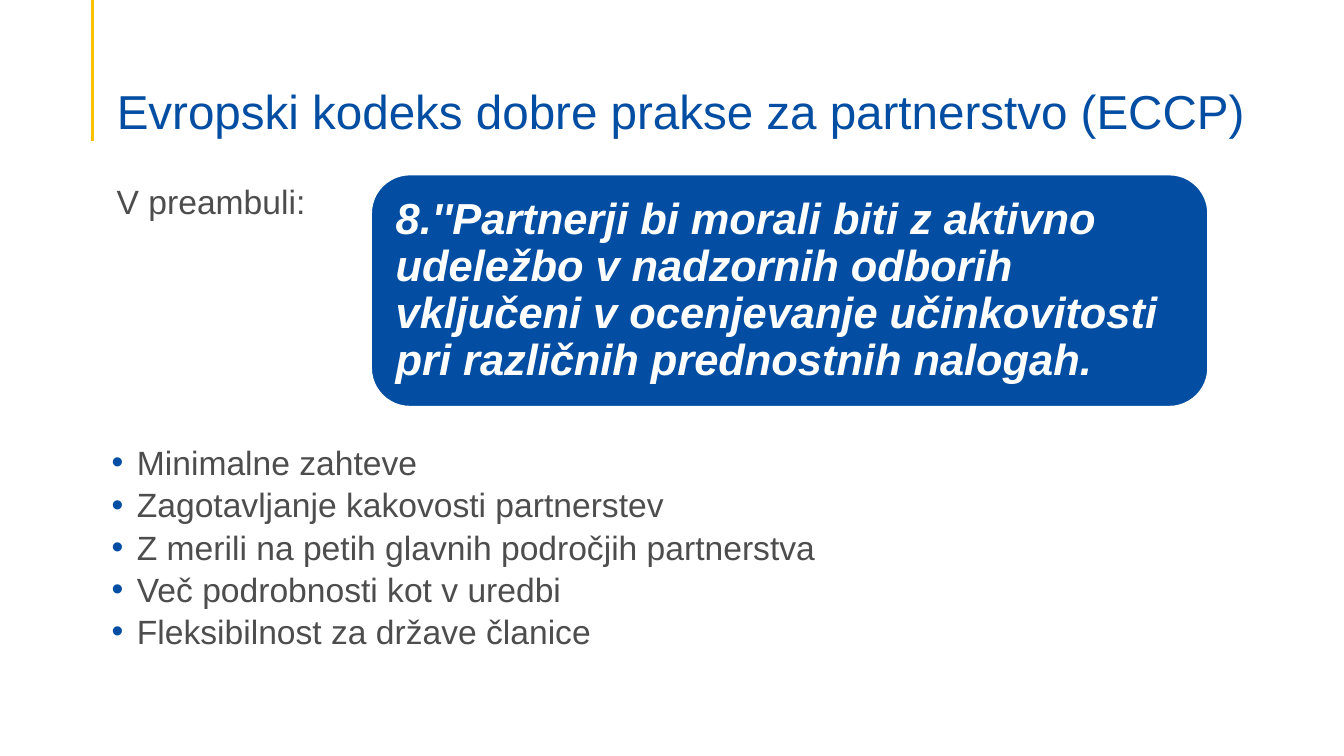
from dataclasses import dataclass

from lxml import etree
from pptx import Presentation
from pptx.dml.color import RGBColor
from pptx.enum.shapes import MSO_CONNECTOR, MSO_SHAPE
from pptx.enum.text import MSO_ANCHOR, PP_ALIGN
from pptx.oxml.ns import qn
from pptx.util import Inches, Pt

STRAIGHT = MSO_CONNECTOR.STRAIGHT
ROUND = MSO_SHAPE.ROUNDED_RECTANGLE
TOP, MIDDLE, BOTTOM = MSO_ANCHOR.TOP, MSO_ANCHOR.MIDDLE, MSO_ANCHOR.BOTTOM
LEFT = PP_ALIGN.LEFT
COLS, ROWS = 80, 45


@dataclass(frozen=True)
class Theme:
    font: str = "Arial"
    blue: RGBColor = RGBColor(0x03, 0x4E, 0xA2)
    gold: RGBColor = RGBColor(0xFF, 0xC0, 0x00)
    gray: RGBColor = RGBColor(0x4D, 0x4D, 0x4D)
    white: RGBColor = RGBColor(0xFF, 0xFF, 0xFF)
    title: int = 34
    quote: int = 31
    body: int = 24


class Deck:
    def __init__(self, theme):
        self.theme = theme
        self.show = Presentation()
        self.show.slide_width = Inches(13.33)
        self.show.slide_height = Inches(7.5)
        self.slide = self.show.slides.add_slide(self.show.slide_layouts[6])

    def place(self, col, row, wide, high):
        unit_x = self.show.slide_width / COLS
        unit_y = self.show.slide_height / ROWS
        return [round(n) for n in
                (col * unit_x, row * unit_y, wide * unit_x, high * unit_y)]

    def rule(self, col, row, high, color):
        x, y, _, tall = self.place(col, row, 0, high)
        line = self.slide.shapes.add_connector(STRAIGHT, x, y, x, y + tall)
        line.line.color.rgb = color
        line.line.width = Pt(2.25)
        etree.SubElement(line._element.spPr, qn("a:effectLst"))

    def label(self, shape, lines, size, color, anchor=TOP, pad=(0.1, 0.05, 0.1, 0.05),
              space=1.0, strong=False, bullet=False):
        frame = shape.text_frame
        frame.word_wrap = True
        frame.vertical_anchor = anchor
        (frame.margin_left, frame.margin_top,
         frame.margin_right, frame.margin_bottom) = map(Inches, pad)
        for i, words in enumerate(lines):
            para = frame.add_paragraph() if i else frame.paragraphs[0]
            para.alignment = LEFT
            para.line_spacing = space
            if bullet:
                self.mark(para)
            run = para.add_run()
            run.text = words
            font = run.font
            font.name = self.theme.font
            font.size = Pt(size)
            font.color.rgb = color
            font.bold = font.italic = strong

    def mark(self, para):
        para.level = 1
        props = para._p.get_or_add_pPr()
        props.set("marL", str(Inches(0.75)))
        props.set("indent", str(Inches(-0.25)))
        tint = etree.SubElement(props, qn("a:buClr"))
        etree.SubElement(tint, qn("a:srgbClr"), val=str(self.theme.blue))
        etree.SubElement(props, qn("a:buFont"), typeface=self.theme.font)
        etree.SubElement(props, qn("a:buChar"), char="•")

    def text(self, box, lines, size, color, **style):
        shape = self.slide.shapes.add_textbox(*self.place(*box))
        self.label(shape, lines, size, color, **style)

    def panel(self, box, lines, size, color, **style):
        shape = self.slide.shapes.add_shape(ROUND, *self.place(*box))
        shape.shadow.inherit = False
        shape.fill.solid()
        shape.fill.fore_color.rgb = self.theme.blue
        shape.line.color.rgb = self.theme.white
        shape.line.width = Pt(1)
        self.label(shape, lines, size, color, **style)


def main():
    theme = Theme()
    deck = Deck(theme)
    deck.rule(5.5, 0, 8.4, theme.gold)
    deck.text((6.36, 3.2, 69, 5.15),
              ["Evropski kodeks dobre prakse za partnerstvo (ECCP)"],
              theme.title, theme.blue, anchor=BOTTOM, pad=(0.1, 0.05, 0.1, 0), space=0.9)
    deck.panel((22.1, 10.4, 49.8, 13.8),
               ["8.''Partnerji bi morali biti z aktivno udeležbo v nadzornih odborih "
                "vključeni v ocenjevanje učinkovitosti pri različnih prednostnih nalogah."],
               theme.quote, theme.white, anchor=MIDDLE, pad=(0.13,) * 4,
               space=0.9, strong=True)
    deck.text((6.36, 10.5, 18, 3), ["V preambuli:"], theme.body, theme.gray)
    deck.text((3.06, 25.9, 48.4, 18),
              ["Minimalne zahteve",
               "Zagotavljanje kakovosti partnerstev",
               "Z merili na petih glavnih področjih partnerstva",
               "Več podrobnosti kot v uredbi",
               "Fleksibilnost za države članice"],
              theme.body, theme.gray, space=1.05, bullet=True)
    deck.show.save("out.pptx")


if __name__ == "__main__":
    main()
